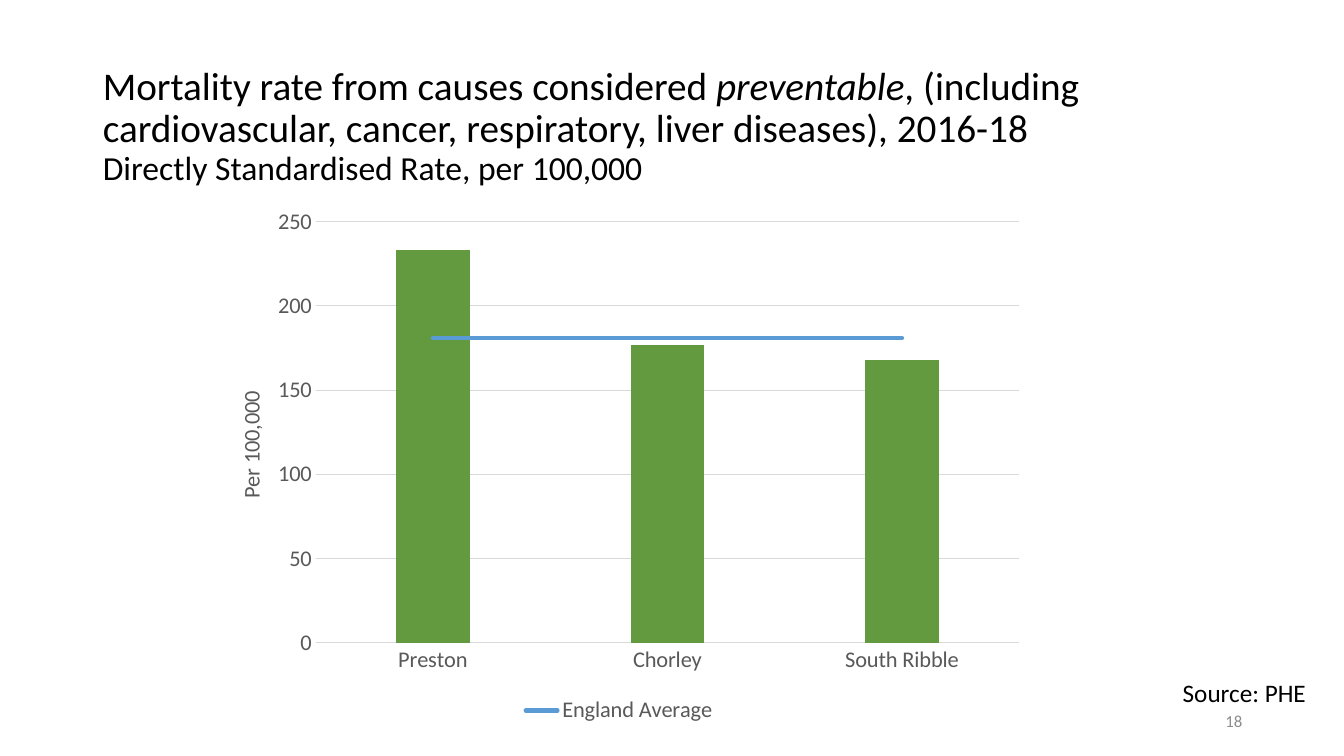
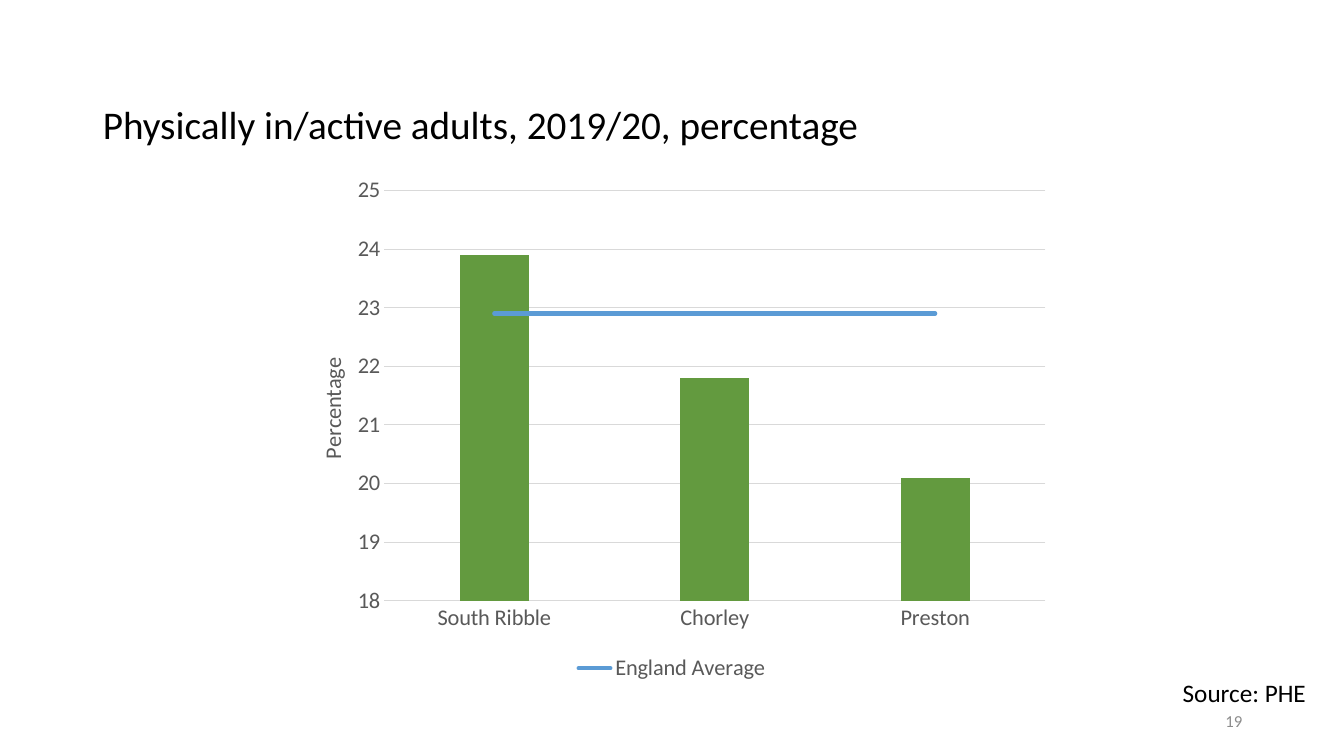
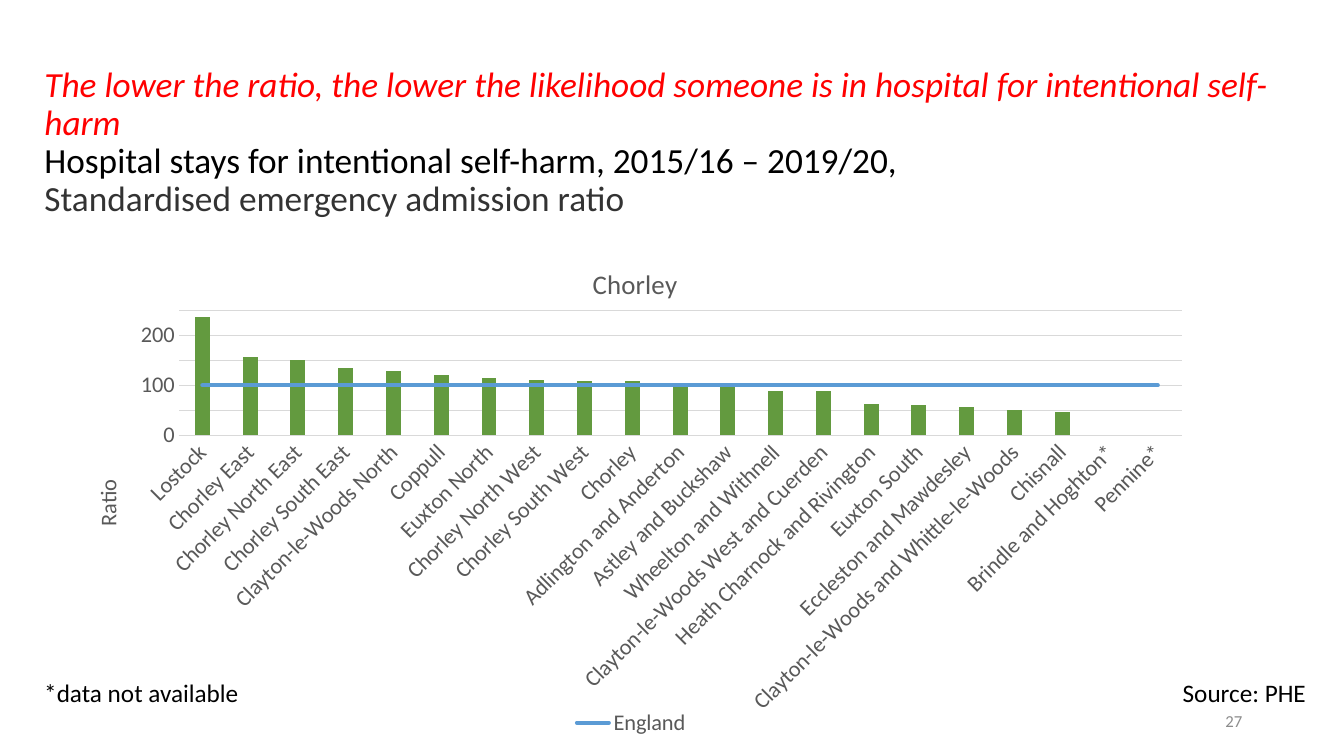
from pptx import Presentation
from pptx.chart.data import CategoryChartData
from pptx.dml.color import RGBColor
from pptx.enum.chart import (XL_CHART_TYPE, XL_LEGEND_POSITION,
                             XL_MARKER_STYLE, XL_TICK_MARK)
from pptx.enum.text import MSO_ANCHOR, MSO_AUTO_SIZE, PP_ALIGN
from pptx.oxml import parse_xml
from pptx.oxml.ns import nsdecls, qn
from pptx.util import Inches, Pt
from lxml import etree

COLUMN = XL_CHART_TYPE.COLUMN_CLUSTERED
BOTTOM = XL_LEGEND_POSITION.BOTTOM
NO_MARK = XL_MARKER_STYLE.NONE
NO_TICK = XL_TICK_MARK.NONE
MIDDLE, TOP = MSO_ANCHOR.MIDDLE, MSO_ANCHOR.TOP
NO_FIT = MSO_AUTO_SIZE.NONE
LEFT, RIGHT = PP_ALIGN.LEFT, PP_ALIGN.RIGHT

FONT = "Calibri"
BLACK, RED, DARK, GREY = "000000", "FF0000", "333333", "595959"
PALE, GRID, GREEN, BLUE = "8C8C8C", "D9D9D9", "639A3F", "5B9BD5"
TITLE_BOX = (0.92, 0.72, 11.5, 1.08)

WARDS = {
    "Lostock": 236, "Chorley East": 157, "Chorley North East": 150,
    "Chorley South East": 134, "Clayton-le-Woods North": 129,
    "Coppull": 121, "Euxton North": 115, "Chorley North West": 111,
    "Chorley South West": 109, "Chorley": 108,
    "Adlington and Anderton": 99, "Astley and Buckshaw": 97,
    "Wheelton and Withnell": 88, "Clayton-le-Woods West and Cuerden": 88,
    "Heath Charnock and Rivington": 62, "Euxton South": 61,
    "Eccleston and Mawdesley": 57,
    "Clayton-le-Woods and Whittle-le-Woods": 50, "Chisnall": 47,
    "Brindle and Hoghton*": None, "Pennine*": None,
}


def rgb(code):
    return RGBColor.from_string(code)


def style(font, size, color=GREY, italic=False):
    font.name, font.size = FONT, Pt(size)
    font.bold, font.italic = False, italic
    font.color.rgb = rgb(color)


def stroke(line, color, width):
    line.color.rgb = rgb(color)
    line.width = Pt(width)


def add_title(slide, lines, size=28, box=TITLE_BOX):
    """Each line is a list of (text, size, colour, italic) runs."""
    shape = slide.shapes.title
    shape.left, shape.top, shape.width, shape.height = map(Inches, box)
    frame = shape.text_frame
    frame.auto_size, frame.vertical_anchor = NO_FIT, MIDDLE
    para = frame.paragraphs[0]
    para.alignment, para.line_spacing = LEFT, 0.9
    for i, runs in enumerate(lines):
        if i:
            para.add_line_break()
        for text, *look in runs:
            run = para.add_run()
            run.text = text
            style(run.font, *look)
    for gap in para._p.findall(qn("a:br")):
        etree.SubElement(gap, qn("a:rPr"), sz=str(round(size * 100)))


def add_text(slide, text, box, size=18, color=BLACK, align=LEFT, anchor=TOP):
    frame = slide.shapes.add_textbox(*map(Inches, box)).text_frame
    frame.word_wrap, frame.vertical_anchor = True, anchor
    frame.text = text
    para = frame.paragraphs[0]
    para.alignment = align
    style(para.runs[0].font, size, color)


def add_foot(slide, number):
    add_text(slide, number, (9.42, 6.95, 3, 0.4), 12, PALE, RIGHT, MIDDLE)
    add_text(slide, "Source: PHE", (11.16, 6.67, 1.89, 0.4), align=RIGHT)


def place(part, frame, spot):
    """Pin a chart part to a spot given in slide inches."""
    left, top, width, height = frame
    share = {"x": (spot[0] - left) / width, "y": (spot[1] - top) / height}
    target = ""
    if len(spot) == 4:
        share.update(w=spot[2] / width, h=spot[3] / height)
        target = '<c:layoutTarget val="inner"/>'
    modes = '<c:xMode val="edge"/><c:yMode val="edge"/>'
    sizes = "".join(f'<c:{k} val="{v:.4f}"/>' for k, v in share.items())
    old = part.find(qn("c:layout"))
    if old is not None:
        part.remove(old)
    part.insert(0 if part.find(qn("c:tx")) is None else 1, parse_xml(
        f'<c:layout {nsdecls("c")}><c:manualLayout>{target}{modes}{sizes}'
        '</c:manualLayout></c:layout>'))


def turn(part, degrees):
    body = next(part.iter(qn("a:bodyPr")))
    body.set("rot", str(degrees * 60000))
    body.set("vert", "horz")


def split_line(chart):
    """Move the second series to a line plot on the same axes."""
    bars = chart.plots[0]._element
    line = parse_xml(
        f'<c:lineChart {nsdecls("c")}><c:grouping val="standard"/>'
        '<c:varyColors val="0"/><c:marker val="1"/></c:lineChart>')
    series = bars.findall(qn("c:ser"))[1]
    flag = series.find(qn("c:invertIfNegative"))
    if flag is not None:
        series.remove(flag)
    line.insert(2, series)
    for axis in bars.findall(qn("c:axId")):
        etree.SubElement(line, qn("c:axId"), val=axis.get("val"))
    bars.addnext(line)
    mean = chart.plots[1].series[0]
    mean.smooth, mean.marker.style = False, NO_MARK
    stroke(mean.format.line, BLUE, 3)
    mean.format.line._get_or_add_ln().set("cap", "rnd")


def add_legend(chart):
    chart.has_legend = True
    legend = chart.legend
    legend.position, legend.include_in_layout = BOTTOM, False
    style(legend.font, 16)
    legend._element.find(qn("c:legendPos")).addnext(parse_xml(
        f'<c:legendEntry {nsdecls("c")}><c:idx val="0"/>'
        '<c:delete val="1"/></c:legendEntry>'))


def set_axes(chart, unit, scale):
    cat, val = chart.category_axis, chart.value_axis
    for axis in (cat, val):
        axis.major_tick_mark = axis.minor_tick_mark = NO_TICK
        style(axis.tick_labels.font, 16)
    stroke(cat.format.line, GRID, 0.75)
    val.format.line.fill.background()
    stroke(val.major_gridlines.format.line, GRID, 0.75)
    val.minimum_scale, val.maximum_scale, val.major_unit = scale
    val.tick_labels.number_format = "0"
    val.tick_labels.number_format_is_linked = False
    frame = val.axis_title.text_frame
    frame.text = unit
    style(frame.paragraphs[0].runs[0].font, 16)
    turn(val.axis_title._element, -90)


def add_rates(slide, rates, mean, unit, scale, box, plot, spot,
              label="England Average"):
    """Draw area columns against a line for the national mean."""
    data = CategoryChartData()
    data.categories = list(rates)
    data.add_series("Series 1", list(rates.values()))
    data.add_series(label, [mean] * len(rates))
    chart = slide.shapes.add_chart(COLUMN, *map(Inches, box), data).chart
    style(chart.font, 16)
    chart.has_title = False
    bars = chart.plots[0]
    bars.gap_width, bars.overlap, bars.vary_by_categories = 219, -27, False
    fill = bars.series[0].format.fill
    fill.solid()
    fill.fore_color.rgb = rgb(GREEN)
    split_line(chart)
    set_axes(chart, unit, scale)
    add_legend(chart)
    place(chart._chartSpace.chart.plotArea, box, plot)
    place(chart.value_axis.axis_title._element, box, spot)
    return chart


def add_mortality(slide):
    add_title(slide, [
        [("Mortality rate from causes considered ", 28, BLACK),
         ("preventable", 28, BLACK, True),
         (", (including cardiovascular, cancer, respiratory, "
          "liver diseases), 2016-18", 28, BLACK)],
        [("Directly Standardised Rate, per 100,000", 24, BLACK)]])
    add_foot(slide, "18")
    add_rates(slide, {"Preston": 233, "Chorley": 177, "South Ribble": 168},
              181, "Per 100,000", (0, 250, 50), (2, 1.96, 8.28, 5.27),
              (3.13, 2.2, 6.98, 4.18), (2.3, 3.84))


def add_activity(slide):
    add_title(slide, [
        [("Physically in/active adults, 2019/20, percentage", 28, BLACK)]])
    add_foot(slide, "19")
    add_rates(slide, {"South Ribble": 23.9, "Chorley": 21.8, "Preston": 20.1},
              22.9, "Percentage", (18, 25, 1), (2.81, 1.66, 7.71, 5.15),
              (3.81, 1.89, 6.56, 4.07), (3.11, 3.51))


def add_harm(slide):
    size = 25.2
    add_title(slide, [
        [("The lower the ratio, the lower the likelihood someone is in "
          "hospital for intentional self-harm", size, RED, True)],
        [("Hospital stays for intentional self-harm, 2015/16 – 2019/20,",
          size, BLACK)],
        [("Standardised emergency admission ratio", size, DARK)]],
        size, (0.34, 0.77, 12.71, 1.3))
    add_foot(slide, "27")
    box = (0.58, 2.33, 11.36, 5.02)
    chart = add_rates(slide, WARDS, 100, "Ratio", (0, 250, 50), box,
                      (1.77, 3.08, 9.95, 1.24), (0.88, 4.72), "England")
    turn(chart.category_axis._element.find(qn("c:txPr")), -45)
    head = chart.chart_title
    head.text_frame.text = "Chorley"
    style(head.text_frame.paragraphs[0].runs[0].font, 19.2)
    place(head._element, box, (5.83, 2.58))
    add_text(slide, "*data not available", (0.34, 6.67, 2.41, 0.4))


def main():
    deck = Presentation()
    deck.slide_width, deck.slide_height = Inches(13.33), Inches(7.5)
    layout = deck.slide_layouts.get_by_name("Title Only")
    for build in (add_mortality, add_activity, add_harm):
        build(deck.slides.add_slide(layout))
    deck.save("out.pptx")


if __name__ == "__main__":
    main()
